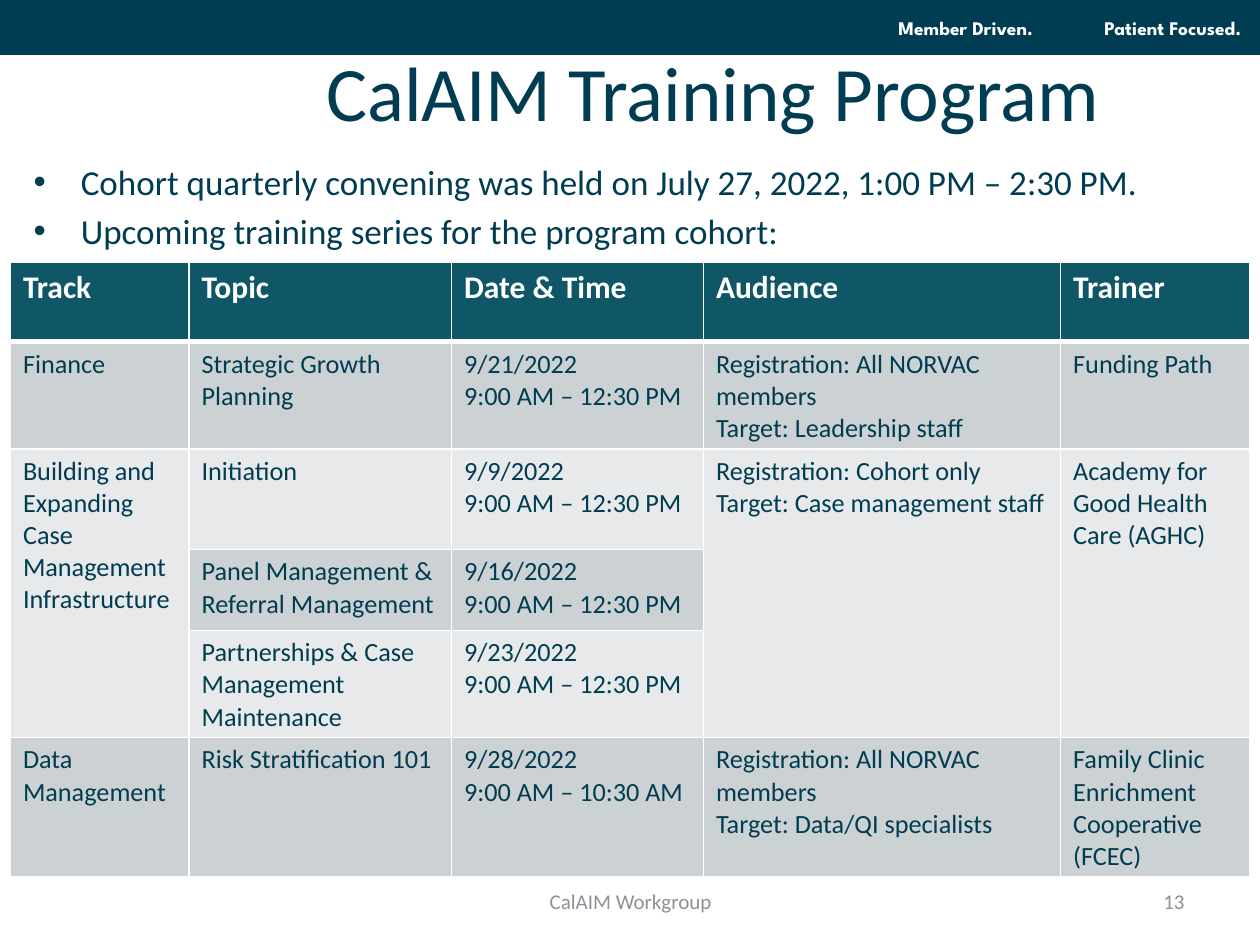
import pptx
import pptx.util
import pptx.dml.color
import pptx.enum.shapes
import pptx.enum.text
import pptx.oxml
import pptx.oxml.ns
from dataclasses import dataclass

Cm = pptx.util.Cm
Pt = pptx.util.Pt
ALIGN = pptx.enum.text.PP_ALIGN
ANCHOR = pptx.enum.text.MSO_ANCHOR


@dataclass(frozen=True)
class Theme:
    navy: str = "003C52"
    teal: str = "0F5666"
    band: str = "CCD1D3"
    pale: str = "E7E9EA"
    grey: str = "8C9298"
    white: str = "FFFFFF"
    body_font: str = "Calibri"
    tagline_font: str = "League Spartan"
    title: int = 44
    bullet: int = 20
    header: int = 18
    cell: int = 15
    footer: int = 12
    tagline: int = 11


def rgb(code):
    return pptx.dml.color.RGBColor.from_string(code)


def element(xml):
    return pptx.oxml.parse_xml(xml.replace(">", f" {pptx.oxml.ns.nsdecls('a')}>", 1))


def write(frame, text, size, color, font, bold=False, align=ALIGN.LEFT,
          bullet=False, gap=0):
    frame.text = text
    for index, paragraph in enumerate(frame.paragraphs):
        paragraph.alignment = align
        if index and gap:
            paragraph.space_before = Pt(gap)
        if bullet:
            properties = paragraph._p.get_or_add_pPr()
            properties.set("marL", str(Cm(0.95)))
            properties.set("indent", str(-Cm(0.95)))
            properties.append(element('<a:buFont typeface="Arial"></a:buFont>'))
            properties.append(element('<a:buChar char="•"></a:buChar>'))
        for run in paragraph.runs:
            run.font.size = Pt(size)
            run.font.name = font
            run.font.bold = bold
            run.font.color.rgb = rgb(color)


class SlideBuilder:
    def __init__(self, slide, theme):
        self.slide = slide
        self.theme = theme

    def bar(self, left, top, width, height):
        band = self.slide.shapes.add_shape(
            pptx.enum.shapes.MSO_SHAPE.RECTANGLE,
            Cm(left), Cm(top), Cm(width), Cm(height))
        band.shadow.inherit = False
        band.fill.solid()
        band.fill.fore_color.rgb = rgb(self.theme.navy)
        band.line.color.rgb = rgb(self.theme.navy)
        band.line.width = Pt(2)

    def text(self, content, left, top, width, height, anchor=ANCHOR.TOP, **style):
        frame = self.slide.shapes.add_textbox(
            Cm(left), Cm(top), Cm(width), Cm(height)).text_frame
        frame.word_wrap = True
        frame.vertical_anchor = anchor
        write(frame, content, **{"font": self.theme.body_font, **style})

    def borders(self, cell, top, bottom):
        properties = cell._tc.get_or_add_tcPr()
        for side, points in (("L", 1), ("R", 1), ("T", top), ("B", bottom)):
            properties.append(element(
                f'<a:ln{side} w="{Pt(points)}"><a:solidFill>'
                f'<a:srgbClr val="{self.theme.white}"/></a:solidFill></a:ln{side}>'))

    def table(self, rows, left, top, widths, heights, merges):
        theme = self.theme
        grid = self.slide.shapes.add_table(
            len(rows), len(widths), Cm(left), Cm(top),
            Cm(sum(widths)), Cm(sum(heights))).table
        for column, width in zip(grid.columns, widths):
            column.width = Cm(width)
        for r, (row, height) in enumerate(zip(rows, heights)):
            grid.rows[r].height = Cm(height)
            is_header = r == 0
            fill = theme.teal if is_header else theme.band if r % 2 else theme.pale
            for c, content in enumerate(row):
                cell = grid.cell(r, c)
                self.borders(cell, 3 if r == 1 else 1, 3 if is_header else 1)
                cell.fill.solid()
                cell.fill.fore_color.rgb = rgb(fill)
                if content:
                    write(cell.text_frame, content, font=theme.body_font,
                          size=theme.header if is_header else theme.cell,
                          color=theme.white if is_header else theme.navy,
                          bold=is_header)
        for column, first, last in merges:
            grid.cell(first, column).merge(grid.cell(last, column))


SESSIONS = [
    ["Track", "Topic", "Date & Time", "Audience", "Trainer"],
    ["Finance", "Strategic Growth Planning", "9/21/2022\n9:00 AM – 12:30 PM",
     "Registration: All NORVAC members\nTarget: Leadership staff", "Funding Path"],
    ["Building and Expanding Case Management Infrastructure", "Initiation",
     "9/9/2022\n9:00 AM – 12:30 PM",
     "Registration: Cohort only\nTarget: Case management staff",
     "Academy for Good Health Care (AGHC)"],
    [None, "Panel Management &\nReferral Management",
     "9/16/2022\n9:00 AM – 12:30 PM", None, None],
    [None, "Partnerships & Case Management Maintenance",
     "9/23/2022\n9:00 AM – 12:30 PM", None, None],
    ["Data Management", "Risk Stratification 101",
     "9/28/2022\n9:00 AM – 10:30 AM",
     "Registration: All NORVAC members\nTarget: Data/QI specialists",
     "Family Clinic Enrichment Cooperative (FCEC)"],
]


def main():
    deck = pptx.Presentation()
    deck.slide_width, deck.slide_height = Cm(25.4), Cm(19.05)
    theme = Theme()
    page = SlideBuilder(deck.slides.add_slide(deck.slide_layouts[6]), theme)

    page.bar(0, 0, 25.4, 1.07)
    for motto, right in (("Member Driven.", 21.08), ("Patient Focused.", 25.28)):
        page.text(motto, right - 4.2, 0.2, 4.2, 0.74, size=theme.tagline,
                  color=theme.white, font=theme.tagline_font, bold=True,
                  align=ALIGN.RIGHT)
    page.text("CalAIM Training Program", 4.45, 0.23, 19.86, 3.18,
              anchor=ANCHOR.MIDDLE, size=theme.title, color=theme.navy,
              align=ALIGN.CENTER)
    page.text("Cohort quarterly convening was held on July 27, 2022, 1:00 PM – 2:30 PM.\n"
              "Upcoming training series for the program cohort:",
              0.43, 3.11, 24.9, 2.15, size=theme.bullet, color=theme.navy,
              bullet=True, gap=4)
    footer = dict(anchor=ANCHOR.MIDDLE, size=theme.footer, color=theme.grey)
    page.text("CalAIM Workgroup", 8.69, 17.65, 8.05, 1.02,
              align=ALIGN.CENTER, **footer)
    page.text("13", 18.21, 17.65, 5.92, 1.02, align=ALIGN.RIGHT, **footer)
    page.table(SESSIONS, 0.21, 5.29,
               widths=[3.6, 5.29, 5.08, 7.2, 3.81],
               heights=[1.6, 2.13, 2.03, 1.63, 2.13, 2.74],
               merges=[(column, 2, 4) for column in (0, 3, 4)])
    deck.save("out.pptx")


if __name__ == "__main__":
    main()
